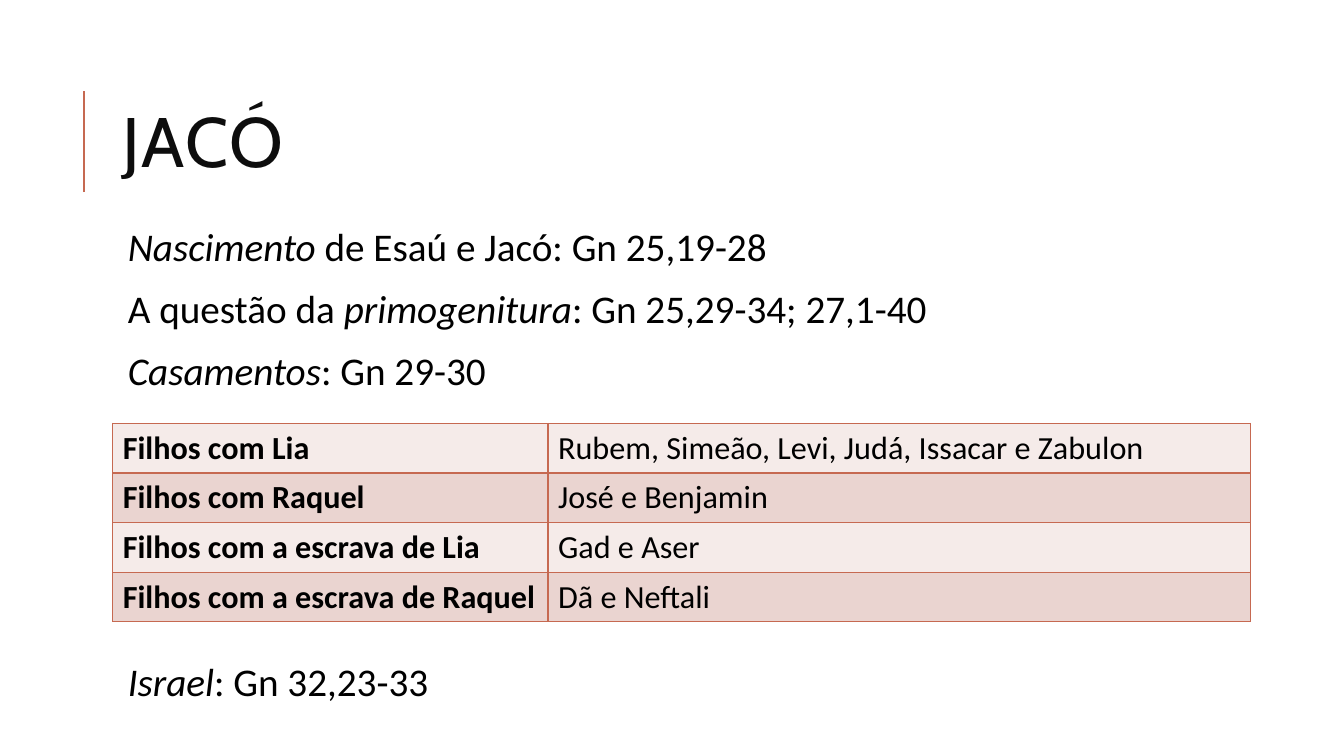
import pptx
import pptx.util
import pptx.dml.color
import pptx.enum.shapes
import pptx.enum.text
import pptx.oxml
import pptx.oxml.ns
from lxml import etree

Cm, Pt = pptx.util.Cm, pptx.util.Pt
RGB = pptx.dml.color.RGBColor.from_string
COLORS = {"accent": "C66951", "title": "0D0D0D", "text": "000000",
          "light": "F5EBE9", "dark": "EAD4D0"}


def write(paragraph, text, size=28, font="Calibri", color="text", bold=False, italic=False):
    run = paragraph.add_run()
    run.text = text
    run.font.size = Pt(size)
    run.font.name = font
    run.font.color.rgb = RGB(COLORS[color])
    run.font.bold = bold
    run.font.italic = italic
    return run


def add_border(cell):
    properties = cell._tc.get_or_add_tcPr()
    for position, side in enumerate(("lnL", "lnR", "lnT", "lnB")):
        properties.insert(position, pptx.oxml.parse_xml(
            f'<a:{side} {pptx.oxml.ns.nsdecls("a")} w="12700"><a:solidFill>'
            f'<a:srgbClr val="{COLORS["accent"]}"/></a:solidFill></a:{side}>'))


presentation = pptx.Presentation()
presentation.slide_width = Cm(33.87)
presentation.slide_height = Cm(19.05)
slide = presentation.slides.add_slide(presentation.slide_layouts[1])

# Title with its vertical rule
rule = slide.shapes.add_connector(
    pptx.enum.shapes.MSO_CONNECTOR.STRAIGHT, Cm(2.12), Cm(4.84), Cm(2.12), Cm(2.3))
rule.line.color.rgb = RGB(COLORS["accent"])
rule.line.width = Pt(1.5)
etree.SubElement(rule._element.spPr, pptx.oxml.ns.qn("a:effectLst"))

title = slide.shapes.title
title.left, title.top, title.width, title.height = Cm(2.84), Cm(1.63), Cm(27), Cm(4.17)
title.text_frame.auto_size = pptx.enum.text.MSO_AUTO_SIZE.NONE
title.text_frame.vertical_anchor = pptx.enum.text.MSO_ANCHOR.MIDDLE
heading = title.text_frame.paragraphs[0]
heading.alignment = pptx.enum.text.PP_ALIGN.LEFT
heading.line_spacing = 0.8
name = write(heading, "JACÓ", size=50, font="Cabin", color="title")
name.font._element.set("spc", "100")

# Passages: (text, italic) pieces; the last one stands below the table
passages = [
    [("Nascimento", True), (" de Esaú e Jacó: Gn 25,19-28", False)],
    [("A questão da ", False), ("primogenitura", True), (": Gn 25,29-34; 27,1-40", False)],
    [("Casamentos", True), (": Gn 29-30", False)],
    [("Israel", True), (": Gn 32,23-33", False)],
]
body = slide.placeholders[1]
body.left, body.top, body.width, body.height = Cm(2.84), Cm(5.61), Cm(27), Cm(12.5)
frame = body.text_frame
frame.auto_size = pptx.enum.text.MSO_AUTO_SIZE.NONE
frame.margin_left = frame.margin_right = frame.margin_top = frame.margin_bottom = Cm(0.13)
for index, pieces in enumerate(passages):
    passage = frame.paragraphs[0] if index == 0 else frame.add_paragraph()
    passage.line_spacing = 0.9
    passage.space_before = Pt(190 if index == len(passages) - 1 else 12)
    passage.space_after = Pt(2)
    properties = passage._p.get_or_add_pPr()
    properties.set("marL", str(Cm(0.25)))
    properties.set("indent", "0")
    etree.SubElement(properties, pptx.oxml.ns.qn("a:buNone"))
    for text, italic in pieces:
        write(passage, text, italic=italic)

# Sons by mother
sons_by_mother = [
    ("Filhos com Lia", "Rubem, Simeão, Levi, Judá, Issacar e Zabulon"),
    ("Filhos com Raquel", "José e Benjamin"),
    ("Filhos com a escrava de Lia", "Gad e Aser"),
    ("Filhos com a escrava de Raquel", "Dã e Neftali"),
]
row_height = Cm(1.25)
sons = slide.shapes.add_table(len(sons_by_mother), 2, Cm(2.84), Cm(10.67), Cm(28.67),
                              row_height * len(sons_by_mother)).table
sons.first_row = sons.horz_banding = False
sons.columns[0].width = Cm(10.97)
sons.columns[1].width = Cm(17.7)
for row, texts in enumerate(sons_by_mother):
    sons.rows[row].height = row_height
    for column, text in enumerate(texts):
        cell = sons.cell(row, column)
        cell.fill.solid()
        cell.fill.fore_color.rgb = RGB(COLORS["dark" if row % 2 else "light"])
        add_border(cell)
        write(cell.text_frame.paragraphs[0], text, size=23, bold=column == 0)

presentation.save("out.pptx")
